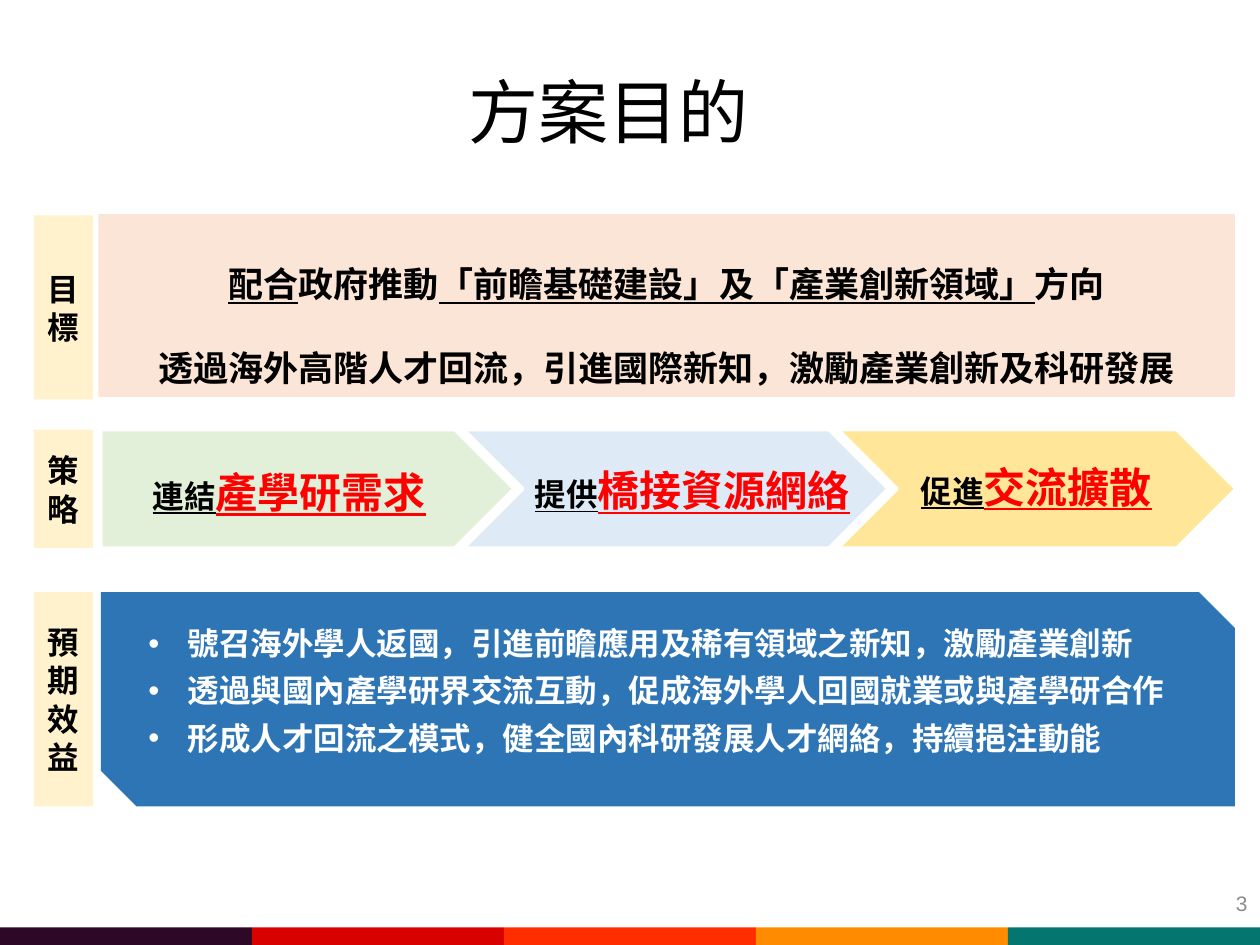
from lxml.etree import SubElement
from pptx import Presentation
from pptx.dml.color import RGBColor
from pptx.enum.shapes import MSO_SHAPE
from pptx.enum.text import MSO_ANCHOR, PP_ALIGN
from pptx.oxml.ns import qn
from pptx.util import Inches, Pt

W, H = 10, 7.5
FONT = "Noto Sans CJK SC"
COLORS = {
    "black": "000000", "white": "FFFFFF", "red": "FF0000", "gray": "8C8C8C",
    "label": "FFF2CC", "goal": "FBE5D6", "effect": "2E75B6",
    "green": "E2F0D9", "blue": "DEEBF7", "yellow": "FFE699",
}
STRIPES = ["2E0927", "D90000", "FF2D00", "FF8C00", "04756F"]
LABEL_X, LABEL_W = 0.27, 0.47
BODY_X, BODY_W = 0.8, 9
GOAL_Y, GOAL_H = 1.7, 1.45
STRATEGY_Y, STRATEGY_H = 3.41, 0.94
EFFECT_Y, EFFECT_H = 4.7, 1.7


def rgb(value):
    return RGBColor.from_string(COLORS.get(value, value))


def add_box(slide, kind, box, fill, line=None):
    sp = slide.shapes.add_shape(kind, *map(Inches, box))
    sp.shadow.inherit = False
    sp.fill.solid()
    sp.fill.fore_color.rgb = rgb(fill)
    if line:
        sp.line.color.rgb = rgb(line)
        sp.line.width = Pt(2)
    else:
        sp.line.fill.background()
    return sp


def add_text(slide, box, anchor=MSO_ANCHOR.TOP, wrap=True):
    tf = slide.shapes.add_textbox(*map(Inches, box)).text_frame
    tf.word_wrap = wrap
    tf.vertical_anchor = anchor
    return tf


def set_paragraph(tf, index, align, spacing=None):
    p = tf.add_paragraph() if index else tf.paragraphs[0]
    p.alignment = align
    if spacing:
        p.line_spacing = Pt(spacing)
    return p


def add_run(p, text, size, color="black", bold=True, underline=False, font=FONT):
    r = p.add_run()
    r.text = text
    r.font.size = Pt(size)
    r.font.bold = bold
    r.font.underline = underline
    r.font.color.rgb = rgb(color)
    r.font.name = font
    SubElement(r.font._element, qn("a:ea"), typeface=font)
    return r


def add_text_shadow(r):
    rPr = r.font._element
    effects = SubElement(rPr, qn("a:effectLst"))
    rPr.find(qn("a:solidFill")).addnext(effects)
    shadow = SubElement(effects, qn("a:outerShdw"), blurRad="38100",
                        dist="38100", dir="2700000", algn="tl")
    SubElement(shadow, qn("a:srgbClr"), val=COLORS["black"])


def add_bullet(p, indent):
    pPr = p._p.get_or_add_pPr()
    pPr.set("marL", str(Inches(indent)))
    pPr.set("indent", str(-Inches(indent)))
    SubElement(pPr, qn("a:buFont"), typeface="Arial")
    SubElement(pPr, qn("a:buChar"), char="•")


def draw_stripes(slide, x, y, w, h):
    step = w / len(STRIPES)
    for i, color in enumerate(STRIPES):
        add_box(slide, MSO_SHAPE.RECTANGLE, (x + i * step, y, step, h), color)


def draw_title(slide, *box):
    tf = add_text(slide, box, MSO_ANCHOR.MIDDLE)
    add_run(set_paragraph(tf, 0, PP_ALIGN.CENTER), "方案目的 ", 40, bold=False)


def draw_page_number(slide, *box):
    p = set_paragraph(add_text(slide, box), 0, PP_ALIGN.RIGHT)
    add_run(p, "3", 12, "gray", bold=False, font="Arial")


def draw_label(slide, text, *box):
    tf = add_box(slide, MSO_SHAPE.RECTANGLE, box, "label").text_frame
    tf.word_wrap = True
    tf.vertical_anchor = MSO_ANCHOR.MIDDLE
    add_run(set_paragraph(tf, 0, PP_ALIGN.CENTER, 22), text, 18)


def draw_goal(slide, *box):
    lines = [
        [("配合", True), ("政府推動", False),
         ("「前瞻基礎建設」及「產業創新領域」", True), ("方向", False)],
        [("透過海外高階人才回流，引進國際新知，激勵產業創新及科研發展", False)],
    ]
    tf = add_box(slide, MSO_SHAPE.RECTANGLE, box, "goal").text_frame
    tf.word_wrap = True
    tf.vertical_anchor = MSO_ANCHOR.TOP
    for i, runs in enumerate(lines):
        p = set_paragraph(tf, i, PP_ALIGN.CENTER, 48)
        for text, underline in runs:
            add_run(p, text, 20, underline=underline)


def draw_strategy(slide, x, y, w, h):
    steps = [
        (MSO_SHAPE.PENTAGON, 0, 3.28, "green", "連結", "產學研需求", 0.3, 2.39, 0.26),
        (MSO_SHAPE.CHEVRON, 2.88, 3.37, "blue", "提供", "橋接資源網絡", 3.33, 2.73, 0.25),
        (MSO_SHAPE.CHEVRON, 5.85, 3.16, "yellow", "促進", "交流擴散", 6.4, 2.05, 0.22),
    ]
    unit = w / 9
    for kind, left, width, fill, *_ in steps:
        add_box(slide, kind, (x + left * unit, y, width * unit, h), fill, "white")
    for *_, verb, topic, left, width, top in steps:
        tf = add_text(slide, (x + left * unit, y + top, width * unit, h * 0.49),
                      MSO_ANCHOR.MIDDLE, False)
        p = set_paragraph(tf, 0, PP_ALIGN.CENTER)
        add_run(p, verb, 18, underline=True)
        add_run(p, topic, 24, "red", underline=True)


def draw_effects(slide, x, y, w, h):
    lines = [
        "號召海外學人返國，引進前瞻應用及稀有領域之新知，激勵產業創新",
        "透過與國內產學研界交流互動，促成海外學人回國就業或與產學研合作",
        "形成人才回流之模式，健全國內科研發展人才網絡，持續挹注動能",
    ]
    add_box(slide, MSO_SHAPE.SNIP_2_DIAG_RECTANGLE, (x, y, w, h), "effect")
    tf = add_text(slide, (x + 0.28, y + 0.13, w - 0.32, h * 0.73))
    for i, text in enumerate(lines):
        p = set_paragraph(tf, i, PP_ALIGN.LEFT, 27)
        add_bullet(p, 0.31)
        add_text_shadow(add_run(p, text, 18, "white"))


def main():
    prs = Presentation()
    prs.slide_width, prs.slide_height = Inches(W), Inches(H)
    slide = prs.slides.add_slide(prs.slide_layouts[6])
    draw_stripes(slide, 0, 7.36, W, 0.15)
    draw_title(slide, 0.64, 0.48, 8.5, 0.79)
    draw_page_number(slide, 7.92, 7.02, 2.08, 0.31)
    draw_effects(slide, BODY_X, EFFECT_Y, BODY_W, EFFECT_H)
    draw_strategy(slide, BODY_X, STRATEGY_Y, BODY_W, STRATEGY_H)
    draw_goal(slide, BODY_X - 0.02, GOAL_Y, BODY_W + 0.02, GOAL_H)
    for text, y, h in [("目標", GOAL_Y + 0.01, GOAL_H + 0.01),
                       ("策略", STRATEGY_Y, STRATEGY_H),
                       ("預期效益", EFFECT_Y, EFFECT_H)]:
        draw_label(slide, text, LABEL_X, y, LABEL_W, h)
    prs.save("out.pptx")


if __name__ == "__main__":
    main()
